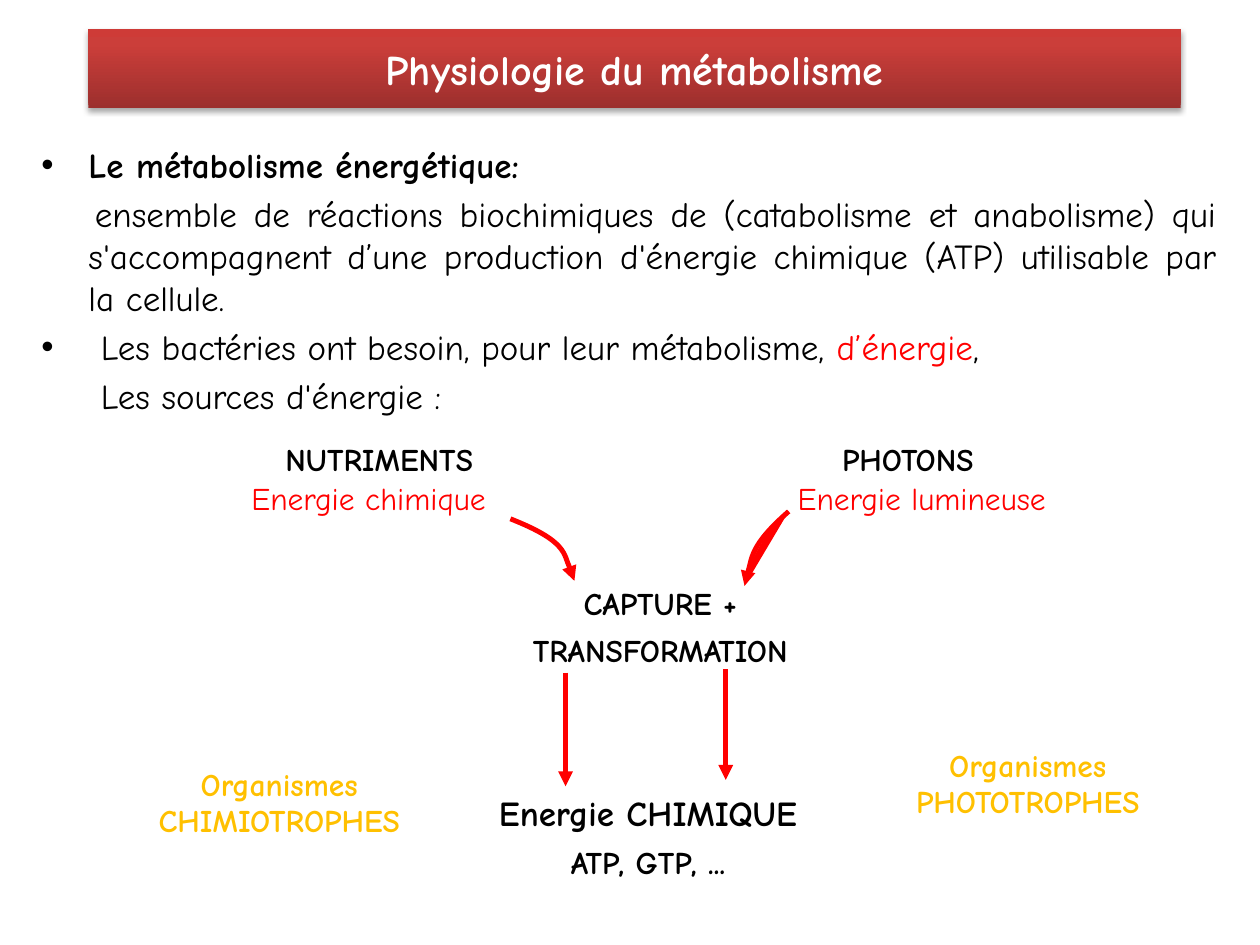
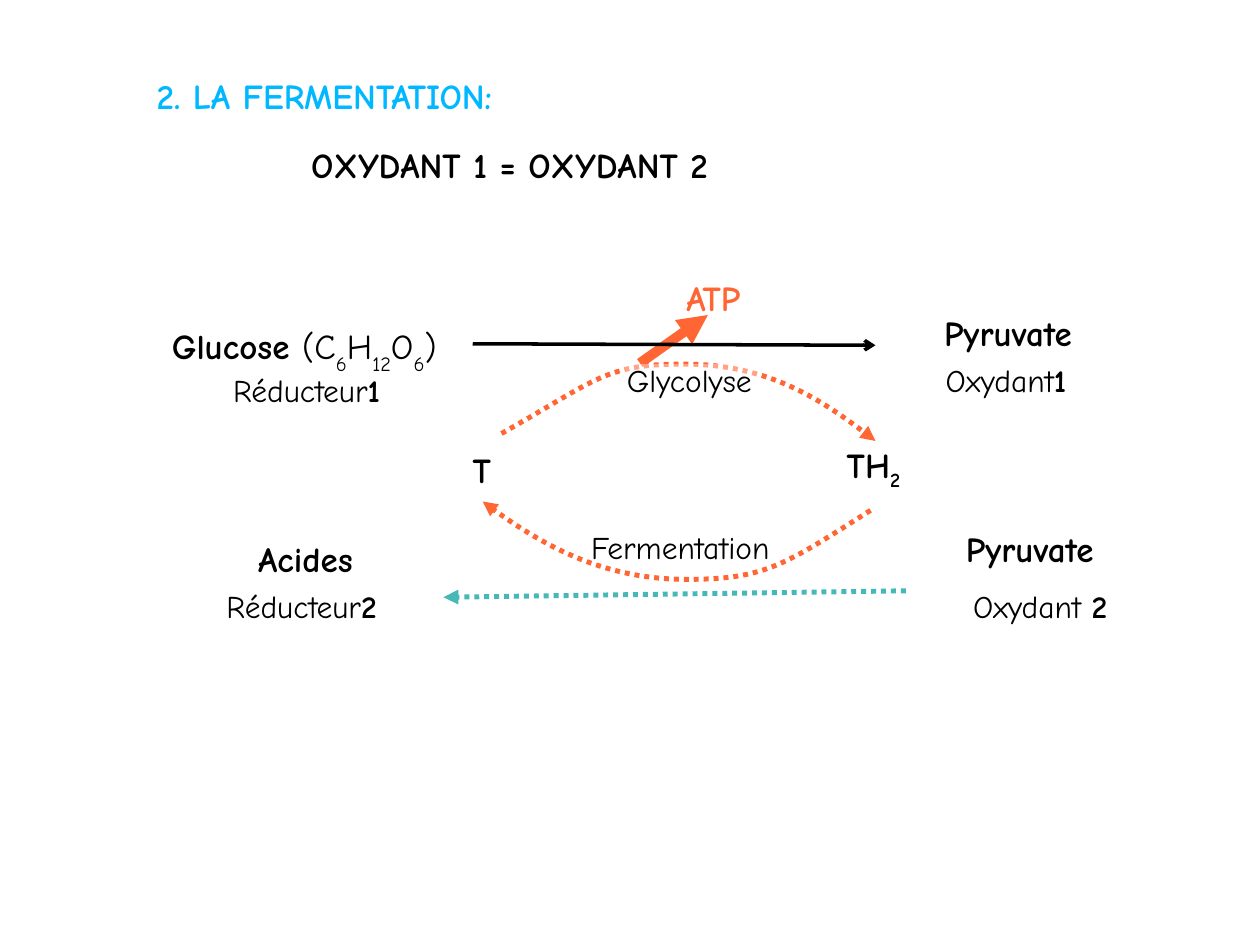
from lxml import etree
from pptx import Presentation
from pptx.dml.color import RGBColor
from pptx.enum.dml import MSO_LINE
from pptx.enum.shapes import MSO_CONNECTOR
from pptx.enum.text import MSO_ANCHOR, MSO_AUTO_SIZE, PP_ALIGN
from pptx.oxml import parse_xml
from pptx.oxml.ns import nsdecls, qn
from pptx.util import Cm, Pt

CENTER, JUSTIFY, LEFT = PP_ALIGN.CENTER, PP_ALIGN.JUSTIFY, PP_ALIGN.LEFT
TOP, MIDDLE = MSO_ANCHOR.TOP, MSO_ANCHOR.MIDDLE
STRAIGHT = MSO_CONNECTOR.STRAIGHT
DOTTED = MSO_LINE.ROUND_DOT
NO_AUTOFIT = MSO_AUTO_SIZE.NONE

FONT = "Comic Neue"
BLACK = RGBColor(0x00, 0x00, 0x00)
WHITE = RGBColor(0xFF, 0xFF, 0xFF)
RED = RGBColor(0xFF, 0x00, 0x00)
GOLD = RGBColor(0xFF, 0xC0, 0x00)
SKY = RGBColor(0x00, 0xB8, 0xFF)
ORANGE = RGBColor(0xFF, 0x66, 0x33)
TEAL = RGBColor(0x47, 0xB8, 0xB8)
BAND_STOPS = [(0, "9C2F2D"), (80, "CB3E3A"), (100, "CE3B37")]

BOLD = {"bold": True}
BIG = {"size": 20, "bold": True}
SUB = {"baseline": -33}

METABOLISM_TITLE = "Physiologie du métabolisme"
DEFINITIONS = [
    ([("Le métabolisme énergétique:", BOLD)],
     {"margin": 0.95, "indent": -0.95, "bullet": True, "align": JUSTIFY}),
    ("ensemble de réactions biochimiques de (catabolisme et anabolisme) qui "
     "s'accompagnent d’une production d'énergie chimique (ATP) utilisable par la cellule.",
     {"margin": 0.95, "indent": 0.13, "align": JUSTIFY}),
    ([("Les bactéries ont besoin, pour leur métabolisme, ", {}),
      ("d’énergie", {"color": RED}), (",", {})],
     {"margin": 1.2, "indent": -1.2, "bullet": True, "align": JUSTIFY}),
    ("Les sources d'énergie :", {"margin": 1.2, "indent": 0, "align": LEFT}),
]
ENERGY_LABELS = [
    ((16.66, 8.94, 3.28, 0.71), ["PHOTONS"], {"bold": True, "wrap": False}),
    ((5.36, 8.94, 4.57, 0.71), ["NUTRIMENTS"], {"bold": True, "wrap": False}),
    ((4.75, 9.73, 5.36, 0.91), ["Energie chimique"], {"color": RED, "wrap": False}),
    ((15.75, 9.73, 5.66, 0.91), ["Energie lumineuse"], {"color": RED, "wrap": False}),
    ((8.74, 11.58, 9.14, 1.85), ["CAPTURE +", "TRANSFORMATION"],
     {"bold": True, "spacing": 1.25}),
    ((8.33, 15.75, 9.47, 1.96), [[("Energie CHIMIQUE", {"size": 20})], "ATP, GTP, ..."],
     {"bold": True, "spacing": 1.25}),
    ((1.78, 15.47, 7.7, 1.47), ["Organismes", "CHIMIOTROPHES"],
     {"bold": True, "color": GOLD, "spacing": 0.96}),
    ((16.87, 15.09, 7.7, 1.47), ["Organismes", "PHOTOTROPHES"],
     {"bold": True, "color": GOLD, "spacing": 0.96}),
]
NUTRIENT_CURVE = [(10.29, 10.46), (11.46, 10.92), (11.58, 11.71), (11.58, 11.71)]
PHOTON_CURVE = [(15.9, 10.31), (15.11, 11), (15.01, 11.81), (15.01, 11.81)]
ENERGY_ARROWS = [((11.4, 13.56), (11.4, 15.85)), ((14.63, 13.49), (14.63, 15.72))]

FERMENTATION_TITLE = "2. LA FERMENTATION:"
FERMENTATION_LABELS = [
    ((5.36, 2.97, 9.83, 0.79), ["OXYDANT 1 = OXYDANT 2"], {**BIG, "wrap": False}),
    ((3.58, 11.91, 5, 0.71), [[("Réducteur", {}), ("2", BOLD)]], {}),
    ((18.47, 11.91, 5, 0.71), [[("Oxydant ", {}), ("2", BOLD)]], {}),
    ((13.11, 5.36, 2.54, 0.91), ["ATP"], {**BIG, "color": ORANGE, "spacing": 1.25}),
    ((3.68, 7.54, 5, 0.71), [[("Réducteur", {}), ("1", BOLD)]], {}),
    ((17.78, 7.34, 5, 0.71), [[("Oxydant", {}), ("1", BOLD)]], {}),
    ((17.07, 8.94, 1.32, 0.79), [[("TH", {}), ("2", {"baseline": -25})]],
     {**BIG, "align": LEFT, "wrap": False}),
    ((9.53, 9.12, 0.48, 0.79), ["T"], {**BIG, "align": LEFT, "wrap": False}),
    ((2.39, 10.92, 7.54, 0.79), ["Acides"], BIG),
    ((1.78, 6.55, 8.71, 0.79),
     [[("Glucose ", BOLD), ("(C", {}), ("6", SUB), ("H", {}), ("12", SUB),
       ("O", {}), ("6", SUB), (")", {})]], {"size": 20}),
    ((18.06, 6.35, 4.52, 0.79), ["Pyruvate"], BIG),
    ((18.26, 10.72, 5, 0.79), ["Pyruvate"], BIG),
    ((11.71, 10.72, 4.01, 0.71), ["Fermentation"], {"veil": 40, "wrap": False}),
    ((12.5, 7.34, 2.79, 0.71), ["Glycolyse"], {"veil": 40, "wrap": False}),
]
GLYCOLYSIS_ARC = [(10.11, 8.74), (12.01, 7.67), (12.19, 7.34), (13.77, 7.34),
                  (15.44, 7.34), (16.64, 8.1), (17.65, 8.89)]
FERMENTATION_ARC = [(17.55, 10.29), (15.8, 11.4), (15.42, 11.68), (13.84, 11.68),
                    (12.17, 11.68), (10.77, 10.9), (9.73, 10.11)]
ATP_ARROW = ((12.9, 7.32), (14.27, 6.35))
GLYCOLYSIS_ARROW = ((9.53, 6.93), (17.65, 6.96))
ACIDS_ARROW = ((18.26, 11.91), (8.94, 12.04))


def write(paragraph, content, size=18, color=BLACK, bold=False, align=CENTER, spacing=None):
    paragraph.alignment = align
    paragraph.line_spacing = spacing
    runs = [(content, {})] if isinstance(content, str) else content
    for text, changes in runs:
        run = paragraph.add_run()
        run.text = text
        run.font.name = FONT
        run.font.size = Pt(changes.get("size", size))
        run.font.bold = changes.get("bold", bold)
        run.font.color.rgb = changes.get("color", color)
        if "baseline" in changes:
            run.font._element.set("baseline", str(changes["baseline"] * 1000))


def place(shape, box):
    shape.left, shape.top, shape.width, shape.height = map(Cm, box)


def clear_insets(frame):
    frame.margin_left = frame.margin_right = frame.margin_top = frame.margin_bottom = 0


def add_label(slide, box, paragraphs, wrap=True, veil=None, spacing=0.93, **style):
    label = slide.shapes.add_textbox(*map(Cm, box))
    frame = label.text_frame
    frame.word_wrap = wrap
    clear_insets(frame)
    for number, content in enumerate(paragraphs):
        paragraph = frame.add_paragraph() if number else frame.paragraphs[0]
        write(paragraph, content, spacing=spacing, **style)
    if veil:
        label.fill.solid()
        label.fill.fore_color.rgb = WHITE
        tint = label.element.spPr.find(".//" + qn("a:srgbClr"))
        etree.SubElement(tint, qn("a:alpha")).set("val", str(veil * 1000))


def set_title(slide, text, box, anchor, **style):
    title = slide.shapes.title
    place(title, box)
    frame = title.text_frame
    frame.auto_size = NO_AUTOFIT
    frame.vertical_anchor = anchor
    write(frame.paragraphs[0], text, bold=True, **style)
    return title


def paint_band(title):
    stops = "".join(f'<a:gs pos="{at * 1000}"><a:srgbClr val="{color}"/></a:gs>'
                    for at, color in BAND_STOPS)
    title.element.spPr.append(parse_xml(
        f'<a:gradFill {nsdecls("a")} rotWithShape="1"><a:gsLst>{stops}</a:gsLst>'
        '<a:lin ang="16200000" scaled="0"/></a:gradFill>'))
    title.element.spPr.append(parse_xml(
        f'<a:effectLst {nsdecls("a")}><a:outerShdw blurRad="40000" dist="23000" '
        'dir="5400000" rotWithShape="0"><a:srgbClr val="000000">'
        '<a:alpha val="35000"/></a:srgbClr></a:outerShdw></a:effectLst>'))


def draw_arrow(shape, color, width, dash, head):
    shape.line.color.rgb = color
    shape.line.width = Pt(width)
    if dash:
        shape.line.dash_style = dash
    properties = shape.element.spPr
    etree.SubElement(properties.find(qn("a:ln")), qn("a:tailEnd")).set("type", head)
    etree.SubElement(properties, qn("a:effectLst"))


def add_arrow(slide, ends, color, width=2.83, dash=None, head="triangle"):
    (x1, y1), (x2, y2) = ends
    arrow = slide.shapes.add_connector(STRAIGHT, Cm(x1), Cm(y1), Cm(x2), Cm(y2))
    draw_arrow(arrow, color, width, dash, head)


def add_curve(slide, points, color, dash=None, filled=False):
    (x, y), *rest = points
    builder = slide.shapes.build_freeform(Cm(x), Cm(y))
    builder.add_line_segments([(Cm(px), Cm(py)) for px, py in rest], close=False)
    curve = builder.convert_to_shape()
    outline = curve.element.spPr.find(".//" + qn("a:path"))
    segments = outline.findall(qn("a:lnTo"))
    for start in range(0, len(segments), 3):
        bezier = etree.SubElement(outline, qn("a:cubicBezTo"))
        for segment in segments[start:start + 3]:
            bezier.append(segment[0])
            outline.remove(segment)
    if filled:
        curve.fill.solid()
        curve.fill.fore_color.rgb = color
    else:
        curve.fill.background()
    draw_arrow(curve, color, 2.83, dash, "triangle")


def fill_definitions(body):
    place(body, (0.58, 2.77, 24.21, 6.35))
    frame = body.text_frame
    frame.auto_size = NO_AUTOFIT
    for number, (content, layout) in enumerate(DEFINITIONS):
        paragraph = frame.add_paragraph() if number else frame.paragraphs[0]
        write(paragraph, content, size=20, align=layout["align"])
        properties = paragraph._p.get_or_add_pPr()
        properties.set("marL", str(Cm(layout["margin"])))
        properties.set("indent", str(Cm(layout["indent"])))
        if layout.get("bullet"):
            etree.SubElement(properties, qn("a:buChar")).set("char", "•")
        else:
            etree.SubElement(properties, qn("a:buNone"))


def build_metabolism(deck):
    slide = deck.slides.add_slide(deck.slide_layouts[1])
    paint_band(set_title(slide, METABOLISM_TITLE, (1.78, 0.58, 22.02, 1.6), MIDDLE,
                         size=24, color=WHITE))
    fill_definitions(slide.placeholders[1])
    for box, paragraphs, style in ENERGY_LABELS:
        add_label(slide, box, paragraphs, **style)
    add_curve(slide, NUTRIENT_CURVE, RED)
    add_curve(slide, PHOTON_CURVE, RED, filled=True)
    for ends in ENERGY_ARROWS:
        add_arrow(slide, ends, RED)


def build_fermentation(deck):
    slide = deck.slides.add_slide(deck.slide_layouts[5])
    title = set_title(slide, FERMENTATION_TITLE, (1.98, 1.57, 9.12, 0.79), TOP,
                      size=20, color=SKY, spacing=0.93)
    clear_insets(title.text_frame)
    add_arrow(slide, ATP_ARROW, ORANGE, width=5.67)
    add_curve(slide, GLYCOLYSIS_ARC, ORANGE, dash=DOTTED)
    for box, paragraphs, style in FERMENTATION_LABELS:
        add_label(slide, box, paragraphs, **style)
    add_arrow(slide, GLYCOLYSIS_ARROW, BLACK, width=2, head="arrow")
    add_curve(slide, FERMENTATION_ARC, ORANGE, dash=DOTTED)
    add_arrow(slide, ACIDS_ARROW, TEAL, dash=DOTTED)


def main():
    deck = Presentation()
    deck.slide_width, deck.slide_height = Cm(25.4), Cm(19.05)
    build_metabolism(deck)
    build_fermentation(deck)
    deck.save("out.pptx")


if __name__ == "__main__":
    main()
